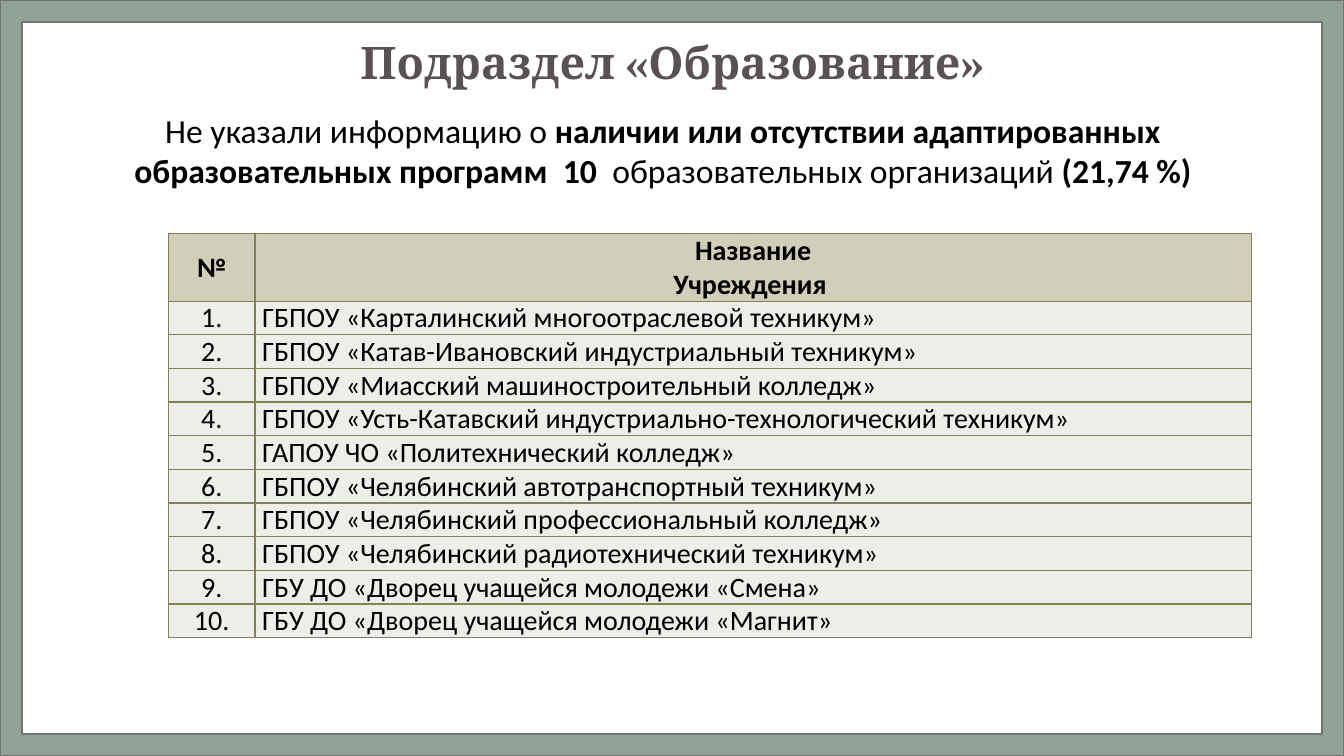
from lxml import etree
from pptx import Presentation
from pptx.dml.color import RGBColor
from pptx.enum.shapes import MSO_SHAPE
from pptx.enum.text import MSO_ANCHOR, PP_ALIGN
from pptx.oxml.ns import qn
from pptx.util import Inches, Pt

FRAME = MSO_SHAPE.FRAME
MIDDLE, TOP = MSO_ANCHOR.MIDDLE, MSO_ANCHOR.TOP
CENTER, LEFT = PP_ALIGN.CENTER, PP_ALIGN.LEFT

INSTITUTIONS = [
    "ГБПОУ «Карталинский многоотраслевой техникум»",
    "ГБПОУ «Катав-Ивановский индустриальный техникум»",
    "ГБПОУ «Миасский машиностроительный колледж»",
    "ГБПОУ «Усть-Катавский индустриально-технологический техникум»",
    "ГАПОУ ЧО «Политехнический колледж»",
    "ГБПОУ «Челябинский автотранспортный техникум»",
    "ГБПОУ «Челябинский профессиональный колледж»",
    "ГБПОУ «Челябинский радиотехнический техникум»",
    "ГБУ ДО «Дворец учащейся молодежи «Смена»",
    "ГБУ ДО «Дворец учащейся молодежи «Магнит»",
]


def color(value):
    return RGBColor.from_string(value)


class ReportSlide:
    body_font = "Calibri"
    title_font = "Cambria"
    ink = "000000"
    title_ink = "5A5155"
    border = "848058"
    header_fill = "D1CEB9"
    row_fill = "EDEDEA"

    def __init__(self, deck):
        self.slide = deck.slides.add_slide(deck.slide_layouts[6])

    def add_frame(self, width, height):
        frame = self.slide.shapes.add_shape(FRAME, 0, 0, width, height)
        frame.adjustments[0] = 0.029
        frame.shadow.inherit = False
        frame.fill.solid()
        frame.fill.fore_color.rgb = color("93A299")
        frame.line.color.rgb = color("6D7871")
        frame.line.width = Pt(1)

    def add_runs(self, paragraph, runs, size, align=CENTER, font=body_font, ink=ink):
        paragraph.alignment = align
        for words, bold in runs:
            run = paragraph.add_run()
            run.text = words
            run.font.name = font
            run.font.size = Pt(size)
            run.font.bold = bold
            run.font.color.rgb = color(ink)

    def add_text(self, left, top, width, height, anchor=TOP):
        box = self.slide.shapes.add_textbox(
            Inches(left), Inches(top), Inches(width), Inches(height))
        box.text_frame.word_wrap = True
        box.text_frame.vertical_anchor = anchor
        return box.text_frame.paragraphs[0]

    def add_title(self, words):
        title = self.add_text(0.92, 0.24, 11.5, 0.8, MIDDLE)
        title.line_spacing = 0.9
        self.add_runs(title, [(words, True)], 32, font=self.title_font, ink=self.title_ink)

    def add_summary(self, runs):
        self.add_runs(self.add_text(0.74, 1.04, 11.67, 0.91), runs, 24)

    def fill_cell(self, cell, lines, align=CENTER, header=False):
        cell.margin_top = cell.margin_bottom = 0
        cell.margin_left = cell.margin_right = Inches(0.06 if header else 0.07)
        cell.vertical_anchor = MIDDLE if header else TOP
        for number, words in enumerate(lines):
            text = cell.text_frame
            paragraph = text.add_paragraph() if number else text.paragraphs[0]
            self.add_runs(paragraph, [(words, header)], 20, align)
        properties = cell._tc.get_or_add_tcPr()
        for side in ("a:lnL", "a:lnR", "a:lnT", "a:lnB"):
            edge = etree.SubElement(properties, qn(side), w=str(Pt(1)))
            paint = etree.SubElement(edge, qn("a:solidFill"))
            etree.SubElement(paint, qn("a:srgbClr"), val=self.border)
        cell.fill.solid()
        cell.fill.fore_color.rgb = color(self.header_fill if header else self.row_fill)

    def add_institutions(self, names):
        table = self.slide.shapes.add_table(
            len(names) + 1, 2, Inches(1.67), Inches(2.32), Inches(10.74), Inches(4)).table
        table.columns[0].width = Inches(0.86)
        table.columns[1].width = Inches(9.88)
        line_height = Inches(4) // (len(names) + 2)
        for index, row in enumerate(table.rows):
            row.height = line_height if index else 2 * line_height
        self.fill_cell(table.cell(0, 0), ["№"], header=True)
        self.fill_cell(table.cell(0, 1), ["Название", "Учреждения "], header=True)
        for index, name in enumerate(names, 1):
            self.fill_cell(table.cell(index, 0), [f"{index}."])
            self.fill_cell(table.cell(index, 1), [name], LEFT)


def main():
    deck = Presentation()
    deck.slide_width = Inches(13.33)
    deck.slide_height = Inches(7.5)
    report = ReportSlide(deck)
    report.add_frame(deck.slide_width, deck.slide_height)
    report.add_title("Подраздел «Образование»")
    report.add_summary([
        ("Не указали информацию о ", False),
        ("наличии или отсутствии адаптированных образовательных программ  10", True),
        ("  образовательных организаций ", False),
        ("(21,74 %)", True),
    ])
    report.add_institutions(INSTITUTIONS)
    deck.save("out.pptx")


if __name__ == "__main__":
    main()
